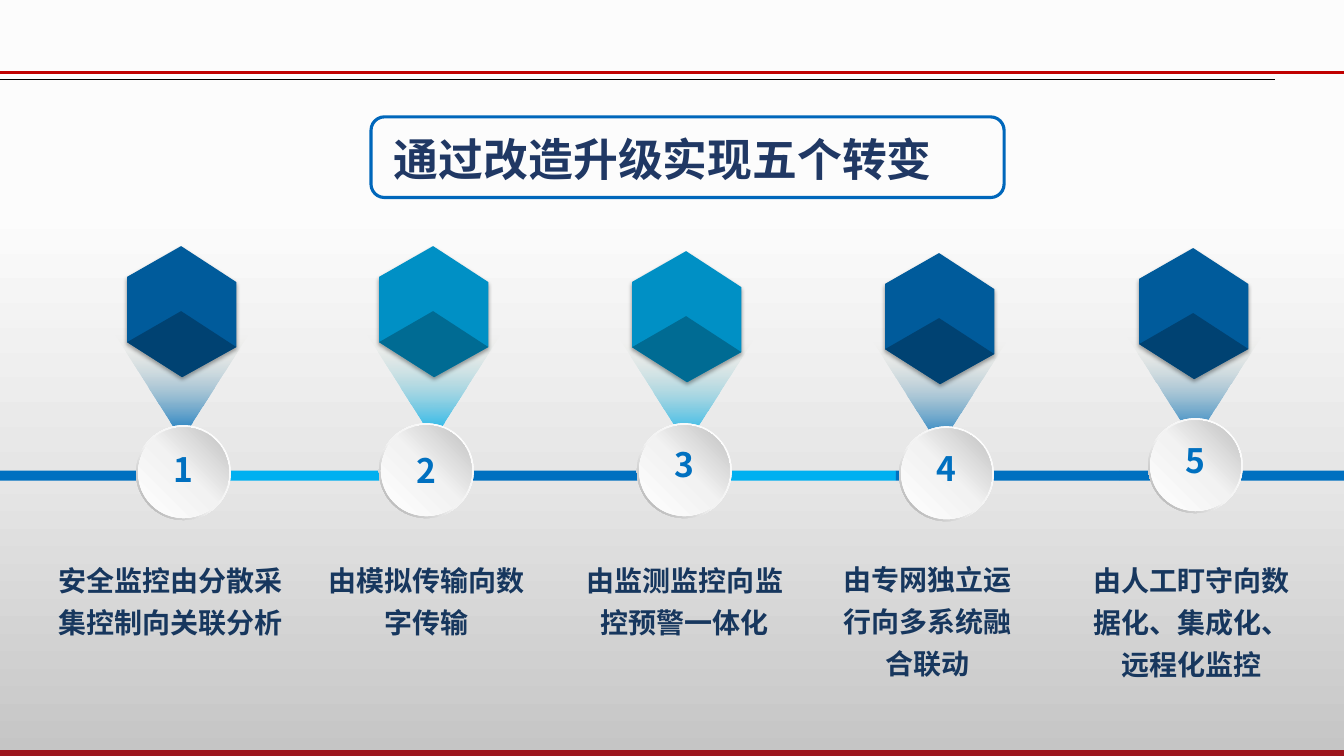
from lxml import etree
from pptx import Presentation
from pptx.dml.color import RGBColor
from pptx.enum.shapes import MSO_CONNECTOR, MSO_SHAPE
from pptx.enum.text import MSO_ANCHOR, MSO_AUTO_SIZE, PP_ALIGN
from pptx.oxml.ns import qn
from pptx.util import Pt

RECT = MSO_SHAPE.RECTANGLE
ROUND = MSO_SHAPE.ROUNDED_RECTANGLE
CONE = MSO_SHAPE.FLOWCHART_MERGE
OVAL = MSO_SHAPE.OVAL
RING = MSO_SHAPE.DONUT
LINE = MSO_CONNECTOR.STRAIGHT
LEFT, MID = PP_ALIGN.LEFT, PP_ALIGN.CENTER
TOP, CENTER = MSO_ANCHOR.TOP, MSO_ANCHOR.MIDDLE
FIXED = MSO_AUTO_SIZE.NONE

FONT = "Noto Sans CJK SC"
WIDE, HIGH = 960, 540
BLUE, CYAN = "0070C0", "00B0F0"
FACES = {BLUE: ("005B9B", "004272"), CYAN: ("0090C5", "006B93")}
HEX = [(0, 22), (38.6, 0), (78, 25.7), (78, 72.1), (39.3, 93.6), (0, 68.6)]
BASE = [(0, 68.6), (38.6, 46.4), (78, 72.1), (39.3, 93.6)]
BARS = [BLUE, CYAN, BLUE, CYAN, BLUE, BLUE]

STEPS = [
    (BLUE, (82.8, 239.8), (97.2, 303.8), 320.4, (32.4, 393, 178.6),
     "安全监控由分散采集控制向关联分析"),
    (CYAN, (262.8, 239.8), (270.7, 302.4), 321.1, (224.6, 393, 159.8),
     "由模拟传输向数字传输"),
    (CYAN, (443.5, 243.4), (455, 302.4), 316.8, (402.5, 393, 173.5),
     "由监测监控向监控预警一体化"),
    (BLUE, (624.2, 244.8), (642.2, 304.6), 319.7, (591.8, 392.4, 141.8),
     "由专网独立运行向多系统融合联动"),
    (BLUE, (805.7, 241.2), (820.1, 298.8), 313.9, (771.1, 393, 160.6),
     "由人工盯守向数据化、集成化、远程化监控"),
]


def color(code):
    return RGBColor.from_string(code)


def blend(fill, root, stops, angle):
    fill.gradient()
    grad = root.find(".//" + qn("a:gradFill"))
    for node in list(grad):
        grad.remove(node)
    items = etree.SubElement(grad, qn("a:gsLst"))
    for place, code, alpha in stops:
        stop = etree.SubElement(items, qn("a:gs"), pos=str(place * 1000))
        tint = etree.SubElement(stop, qn("a:srgbClr"), val=code)
        if alpha < 100:
            etree.SubElement(tint, qn("a:alpha"), val=str(alpha * 1000))
    etree.SubElement(grad, qn("a:lin"), ang=str(angle * 60000), scaled="0")


def block(slide, kind, left, top, width, height, code=None):
    shape = slide.shapes.add_shape(kind, Pt(left), Pt(top), Pt(width), Pt(height))
    shape.shadow.inherit = False
    shape.line.fill.background()
    if code:
        shape.fill.solid()
        shape.fill.fore_color.rgb = color(code)
    else:
        shape.fill.background()
    return shape


def rule(slide, top, right, code, weight):
    line = slide.shapes.add_connector(LINE, 0, Pt(top), Pt(right), Pt(top))
    line.line.color.rgb = color(code)
    line.line.width = Pt(weight)
    etree.SubElement(line._element.spPr, qn("a:effectLst"))


def face(slide, left, top, points, code):
    spots = [(Pt(left + x), Pt(top + y)) for x, y in points]
    path = slide.shapes.build_freeform(*spots[0])
    path.add_line_segments(spots[1:], close=True)
    shape = path.convert_to_shape()
    shape.shadow.inherit = False
    shape.fill.solid()
    shape.fill.fore_color.rgb = color(code)
    shape.line.fill.background()
    return shape


def write(shape, text, size, code, align, anchor, inset, space=None):
    frame = shape.text_frame
    frame.auto_size = FIXED
    frame.word_wrap = True
    frame.vertical_anchor = anchor
    frame.margin_left = frame.margin_right = Pt(inset[0])
    frame.margin_top = frame.margin_bottom = Pt(inset[1])
    para = frame.paragraphs[0]
    para.alignment = align
    para.space_before = Pt(0)
    if space:
        para.line_spacing = Pt(space)
    run = para.add_run()
    run.text = text
    run.font.size = Pt(size)
    run.font.bold = True
    run.font.color.rgb = color(code)
    run.font.name = FONT
    etree.SubElement(run._r.get_or_add_rPr(), qn("a:ea"), typeface=FONT)


def label(slide, left, top, width, height, *style):
    box = slide.shapes.add_textbox(Pt(left), Pt(top), Pt(width), Pt(height))
    write(box, *style)


def frame(slide):
    back = slide.background.fill
    stops = [(0, "FCFCFC", 100), (27, "FCFCFC", 100),
             (63, "E6E6E6", 100), (100, "C5C5C5", 100)]
    blend(back, slide._element, stops, 90)
    rule(slide, 51.8, WIDE, "C00000", 2.25)
    rule(slide, 56.9, 910.8, "000000", 0.5)
    rule(slide, 538.6, WIDE, "9D161E", 6)


def header(slide, left, top, width, height):
    edge = block(slide, ROUND, left, top, width, height)
    edge.line.color.rgb = color("0067BB")
    edge.line.width = Pt(2.25)
    title = slide.shapes.title
    title.left, title.top = Pt(left + 16.4), Pt(top + 10)
    title.width, title.height = Pt(width - 20), Pt(42.5)
    write(title, "通过改造升级实现五个转变", 32, "203864", LEFT, CENTER, (0, 0), 35)


def track(slide, left, top, width, height):
    step = width / len(BARS)
    for i, code in enumerate(BARS):
        block(slide, RECT, left + i * step, top, step, height, code)


def cube(slide, left, top, code):
    beam = block(slide, CONE, left, top, 94.3, 74.2)
    blend(beam.fill, beam._element, [(0, "DDD9C3", 0), (100, code, 100)], 90)
    upper, lower = FACES[code]
    body = face(slide, left + 8, top - 64, HEX, upper)
    glow = etree.SubElement(
        body._element.spPr.find(qn("a:effectLst")), qn("a:outerShdw"),
        blurRad=str(Pt(3)), dist=str(Pt(1.8)), dir="5400000", rotWithShape="0")
    tint = etree.SubElement(glow, qn("a:srgbClr"), val="000000")
    etree.SubElement(tint, qn("a:alpha"), val="35000")
    face(slide, left + 8, top - 64, BASE, lower)


def disc(slide, left, top, number, base):
    ring = block(slide, RING, left, top, 67.7, 67.7)
    ring.adjustments[0] = 0.05
    blend(ring.fill, ring._element,
          [(0, "FFFFFF", 100), (55, "F2F2F2", 100), (100, "A6A6A6", 100)], 135)
    core = block(slide, OVAL, left + 1.45, top + 1.45, 64.8, 64.8)
    blend(core.fill, core._element,
          [(0, "FFFFFF", 100), (51, "F2F2F2", 100), (100, "BFBFBF", 100)], 315)
    label(slide, left, base, 67.7, 28, str(number), 24, BLUE, MID, TOP, (0, 0))


def main():
    deck = Presentation()
    deck.slide_width, deck.slide_height = Pt(WIDE), Pt(HIGH)
    slide = deck.slides.add_slide(deck.slide_layouts[5])
    frame(slide)
    header(slide, 265, 83.5, 452.2, 57.6)
    track(slide, 0, 336.2, WIDE, 7.2)
    for number, (code, peak, spot, base, area, text) in enumerate(STEPS, 1):
        cube(slide, *peak, code)
        disc(slide, *spot, number, base)
        label(slide, *area, 98, text, 20, "17375E", MID, TOP, (7.2, 3.6), 30)
    deck.save("out.pptx")


if __name__ == "__main__":
    main()
